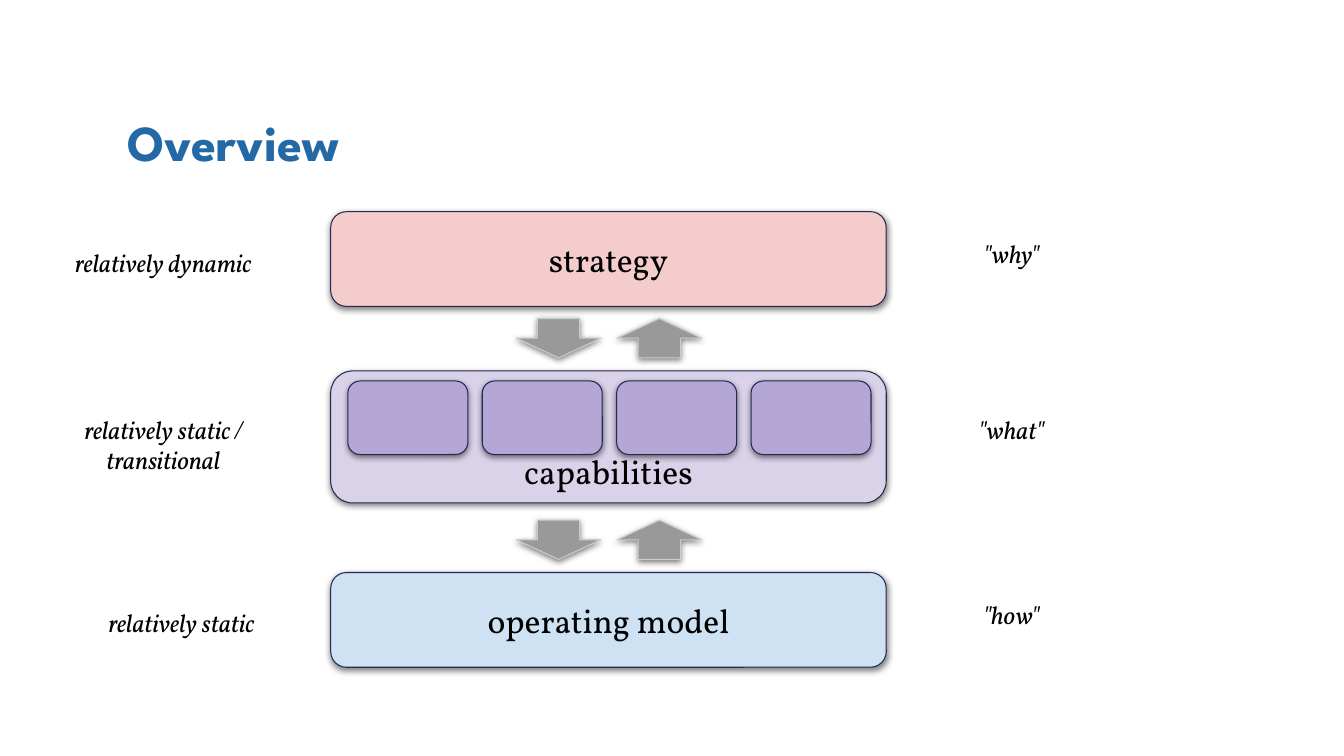
from lxml.etree import SubElement
from pptx import Presentation
from pptx.dml.color import RGBColor
from pptx.enum.shapes import MSO_SHAPE
from pptx.enum.text import MSO_ANCHOR, PP_ALIGN
from pptx.oxml.ns import qn
from pptx.util import Inches, Pt

CELL = 0.1  # inches per grid column and row
BODY = {"name": "Vollkorn", "size": Pt(24), "color": "000000"}
NOTE = {**BODY, "size": Pt(18), "italic": True}
HEADING = {"name": "League Spartan", "size": Pt(36), "bold": True, "color": "2269A5"}


def rgb(value):
    return RGBColor.from_string(value)


def grid(*cells):
    return [Inches(cell * CELL) for cell in cells]


class Deck:
    def __init__(self, prs):
        self.s = prs.slides.add_slide(prs.slide_layouts[5])

    def set_text(self, sp, text, style, align=PP_ALIGN.CENTER,
                 anchor=MSO_ANCHOR.MIDDLE, inset=0.1):
        tf = sp.text_frame
        frame = {"word_wrap": True, "vertical_anchor": anchor,
                 "margin_left": Inches(0.1), "margin_right": Inches(0.1),
                 "margin_top": Inches(inset), "margin_bottom": Inches(inset)}
        for name, value in frame.items():
            setattr(tf, name, value)
        for i, line in enumerate(text.split("\n")):
            p = tf.add_paragraph() if i else tf.paragraphs[0]
            p.alignment = align
            r = p.add_run()
            r.text = line
            for name, value in style.items():
                if name == "color":
                    r.font.color.rgb = rgb(value)
                else:
                    setattr(r.font, name, value)

    def title(self, text, *cells):
        sp = self.s.shapes.title
        sp.left, sp.top, sp.width, sp.height = grid(*cells)
        self.set_text(sp, text, HEADING, PP_ALIGN.LEFT, MSO_ANCHOR.BOTTOM, 0.05)
        sp.text_frame.paragraphs[0].line_spacing = 0.8

    def shape(self, kind, fill, line, *cells):
        sp = self.s.shapes.add_shape(kind, *grid(*cells))
        sp.fill.solid()
        sp.fill.fore_color.rgb = rgb(fill)
        sp.line.color.rgb = rgb(line)
        sp.line.width = Pt(0.75)
        self.drop_shadow(sp)
        return sp

    def drop_shadow(self, sp):
        sp.shadow.inherit = False
        effects = sp._element.spPr.find(qn("a:effectLst"))
        shadow = SubElement(effects, qn("a:outerShdw"), blurRad=str(Pt(4.5)),
                            dist=str(Pt(1.5)), dir="5400000",
                            algn="bl", rotWithShape="0")
        color = SubElement(shadow, qn("a:srgbClr"), val="000000")
        SubElement(color, qn("a:alpha"), val="50000")

    def box(self, fill, *cells, text="", **layout):
        sp = self.shape(MSO_SHAPE.ROUNDED_RECTANGLE, fill, "242852", *cells)
        if text:
            self.set_text(sp, text, BODY, **layout)

    def arrow(self, rotation, *cells):
        sp = self.shape(MSO_SHAPE.DOWN_ARROW, "999999", "CCCCCC", *cells)
        sp.rotation = rotation

    def note(self, text, *cells):
        sp = self.s.shapes.add_textbox(*grid(*cells))
        self.set_text(sp, text, NOTE, anchor=MSO_ANCHOR.TOP)


def main():
    prs = Presentation()
    prs.slide_width, prs.slide_height = Inches(13.33), Inches(7.5)
    deck = Deck(prs)
    deck.title("Overview", 11.6, 5.8, 95, 11.7)

    # Three layers
    left, width = 32.8, 55.1
    deck.box("D9D2E9", left, 36.8, width, 13.1, text="capabilities",
             anchor=MSO_ANCHOR.BOTTOM, inset=0.05)
    deck.box("F4CCCC", left, 21, width, 9.4, text="strategy")
    deck.box("CFE2F3", left, 56.8, width, 9.4, text="operating model")

    # Single capabilities
    for i in range(4):
        deck.box("B4A7D6", 34.5 + i * 13.33, 37.8, 11.9, 7.3)

    # Arrows down and up between the layers
    for top in (31.6, 51.6):
        for x, rotation in ((51.2, 0), (61.2, 180)):
            deck.arrow(rotation, x, top, 8.4, 3.9)

    # Notes on pace (left) and question (right)
    for text, x, top, height in (
        ("relatively dynamic", 4.2, 23.5, 5.2),
        ("relatively static /\ntransitional", 4.2, 40.1, 8.4),
        ("relatively static", 6, 59.2, 5.2),
        ('"why"', 88.3, 22.6, 5.2),
        ('"what"', 88.3, 40.1, 5.2),
        ('"how"', 88.3, 58.5, 5.2),
    ):
        deck.note(text, x, top, 24, height)

    prs.save("out.pptx")


if __name__ == "__main__":
    main()
